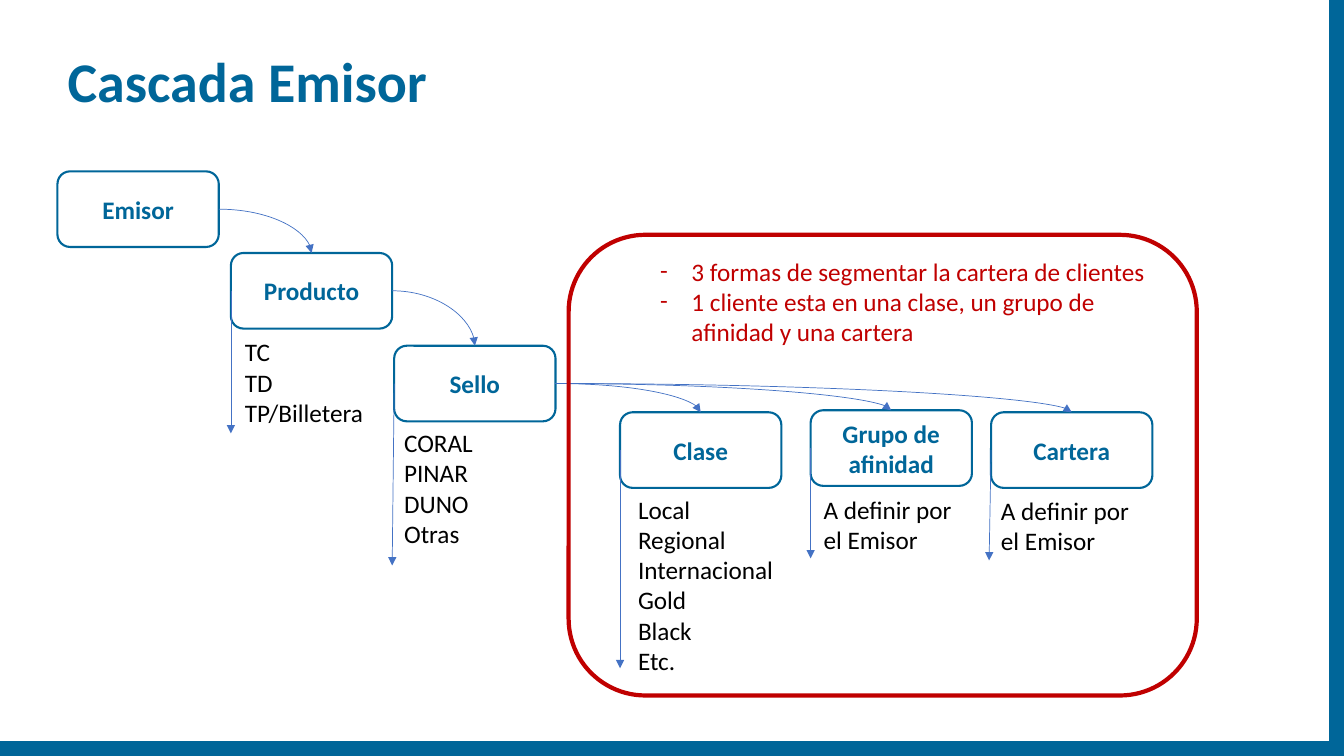
import pptx
import pptx.dml.color
import pptx.enum.shapes
import pptx.enum.text
import pptx.oxml
import pptx.oxml.ns
import pptx.util
from pptx.util import Inches

TEAL = pptx.dml.color.RGBColor(0x00, 0x66, 0x99)
BLUE = pptx.dml.color.RGBColor(0x44, 0x72, 0xC4)
RED = pptx.dml.color.RGBColor(0xC0, 0x00, 0x00)
BLACK = pptx.dml.color.RGBColor(0x00, 0x00, 0x00)
FONT = "Calibri"
SLIDE_W, SLIDE_H, BAR = 13.33, 7.5, 0.14
LEVEL_W, LEVEL_H = 1.6, 0.75
OPTIONS_W = 1.56
TOP_SITE, LEFT_SITE, RIGHT_SITE = 0, 1, 3

LEVEL_CORNERS = {
    "Emisor": (0.57, 1.7),
    "Sello": (3.91, 3.43),
    "Producto": (2.29, 2.51),
    "Cartera": (9.83, 4.09),
    "Grupo de afinidad": (8.04, 4.07),
    "Clase": (6.15, 4.09),
}
CASCADE = [("Emisor", "Producto"), ("Producto", "Sello"), ("Sello", "Cartera"),
           ("Sello", "Clase"), ("Sello", "Grupo de afinidad")]
LEVEL_OPTIONS = [
    ("Producto", ["TC", "TD", "TP/Billetera"], (2.33, 3.29, OPTIONS_W, 1.01), (2.29, 4.3)),
    ("Sello", ["CORAL", "PINAR", "DUNO", "Otras"], (3.91, 4.19, OPTIONS_W, 1.31), (3.89, 5.61)),
    ("Clase", ["Local", "Regional", "Internacional", "Gold", "Black", "Etc."],
     (6.23, 4.85, OPTIONS_W, 1.92), (6.15, 6.63)),
    ("Grupo de afinidad", ["A definir por el Emisor"],
     (8.07, 4.85, OPTIONS_W, 0.71), (8.04, 5.54)),
    ("Cartera", ["A definir por el Emisor"], (9.83, 4.86, OPTIONS_W, 0.71), (9.81, 5.56)),
]
NOTES = ["3 formas de segmentar la cartera de clientes",
         "1 cliente esta en una clase, un grupo de afinidad y una cartera"]


def inches(*lengths):
    """Convert plain numbers to lengths."""
    return [Inches(length) for length in lengths]


def drawing_element(markup):
    """Build one empty DrawingML element."""
    return pptx.oxml.parse_xml(f'<a:{markup} {pptx.oxml.ns.nsdecls("a")}/>')


def style_text(frame, size, color, bold=False):
    """Format every run of a text frame."""
    for paragraph in frame.paragraphs:
        for run in paragraph.runs:
            run.font.name = FONT
            run.font.size = pptx.util.Pt(size)
            run.font.bold = bold
            run.font.color.rgb = color


def add_outline(slide, box, color, width):
    """Add an unfilled rounded rectangle."""
    outline = slide.shapes.add_shape(
        pptx.enum.shapes.MSO_SHAPE.ROUNDED_RECTANGLE, *inches(*box))
    outline.shadow.inherit = False
    outline.fill.background()
    outline.line.color.rgb = color
    outline.line.width = pptx.util.Pt(width)
    return outline


def add_bar(slide, box):
    """Add one solid edge bar."""
    bar = slide.shapes.add_shape(
        pptx.enum.shapes.MSO_SHAPE.RECTANGLE, *inches(*box))
    bar.shadow.inherit = False
    bar.fill.solid()
    bar.fill.fore_color.rgb = TEAL
    bar.line.color.rgb = TEAL
    bar.line.width = pptx.util.Pt(1)


def add_title(slide, box):
    """Place and format the slide title."""
    title = slide.shapes.title
    title.left, title.top, title.width, title.height = inches(*box)
    frame = title.text_frame
    frame.text = "Cascada Emisor"
    frame.vertical_anchor = pptx.enum.text.MSO_ANCHOR.MIDDLE
    frame.paragraphs[0].alignment = pptx.enum.text.PP_ALIGN.LEFT
    frame.paragraphs[0].line_spacing = 0.9
    style_text(frame, 40, TEAL, bold=True)


def add_level(slide, name, left, top):
    """Add one labelled level of the cascade."""
    level = add_outline(slide, (left, top, LEVEL_W, LEVEL_H), TEAL, 1.5)
    frame = level.text_frame
    frame.word_wrap = True
    frame.text = name
    frame.vertical_anchor = pptx.enum.text.MSO_ANCHOR.MIDDLE
    frame.paragraphs[0].alignment = pptx.enum.text.PP_ALIGN.CENTER
    style_text(frame, 18, TEAL, bold=True)
    return level


def add_arrow(slide, kind, start, site, end):
    """Add a thin arrow from a site of a level to a point."""
    arrow = slide.shapes.add_connector(kind, 0, 0, *inches(*end))
    arrow.begin_connect(start, site)
    arrow.line.color.rgb = BLUE
    arrow.line.width = pptx.util.Pt(0.5)
    properties = arrow.element.spPr
    properties.find(pptx.oxml.ns.qn("a:ln")).append(
        drawing_element('tailEnd type="triangle"'))
    properties.append(drawing_element("effectLst"))
    return arrow


def add_cascade_arrow(slide, parent, child):
    """Curve from the right of one level to the top of the next."""
    arrow = add_arrow(slide, pptx.enum.shapes.MSO_CONNECTOR.CURVE,
                      parent, RIGHT_SITE, (0, 0))
    arrow.end_connect(child, TOP_SITE)
    geometry = arrow.element.spPr.find(pptx.oxml.ns.qn("a:prstGeom"))
    geometry.set("prst", "curvedConnector2")


def add_text(slide, box, lines, color):
    """Add a text box with one paragraph per line."""
    frame = slide.shapes.add_textbox(*inches(*box)).text_frame
    frame.word_wrap = True
    frame.auto_size = pptx.enum.text.MSO_AUTO_SIZE.SHAPE_TO_FIT_TEXT
    frame.text = "\n".join(lines)
    style_text(frame, 18, color)
    return frame


def add_segmentation(slide, box):
    """Add the red frame with its dashed notes."""
    left, top, width, height = box
    add_outline(slide, box, RED, 3)
    frame = add_text(slide, (left + 0.81, top + 0.16, 5.06, 1.01), NOTES, RED)
    for paragraph in frame.paragraphs:
        properties = paragraph._p.get_or_add_pPr()
        properties.set("marL", str(Inches(0.31)))
        properties.set("indent", str(-Inches(0.31)))
        properties.append(drawing_element(f'buFont typeface="{FONT}"'))
        properties.append(drawing_element('buChar char="-"'))


def add_cascade(slide):
    """Add the levels, their arrows and their options."""
    levels = {name: add_level(slide, name, *corner)
              for name, corner in LEVEL_CORNERS.items()}
    for parent, child in CASCADE:
        add_cascade_arrow(slide, levels[parent], levels[child])
    for name, options, box, arrow_end in LEVEL_OPTIONS:
        add_text(slide, box, options, BLACK)
        add_arrow(slide, pptx.enum.shapes.MSO_CONNECTOR.STRAIGHT,
                  levels[name], LEFT_SITE, arrow_end)


def main():
    """Build and save the slide."""
    deck = pptx.Presentation()
    deck.slide_width, deck.slide_height = inches(SLIDE_W, SLIDE_H)
    slide = deck.slides.add_slide(deck.slide_layouts[5])
    add_bar(slide, (0, SLIDE_H - BAR, SLIDE_W, BAR))
    add_bar(slide, (SLIDE_W - BAR, 0, BAR, SLIDE_H - BAR))
    add_title(slide, (0.57, 0.4, 11.84, 0.87))
    add_cascade(slide)
    add_segmentation(slide, (5.64, 2.33, 6.23, 4.57))
    deck.save("out.pptx")


if __name__ == "__main__":
    main()
